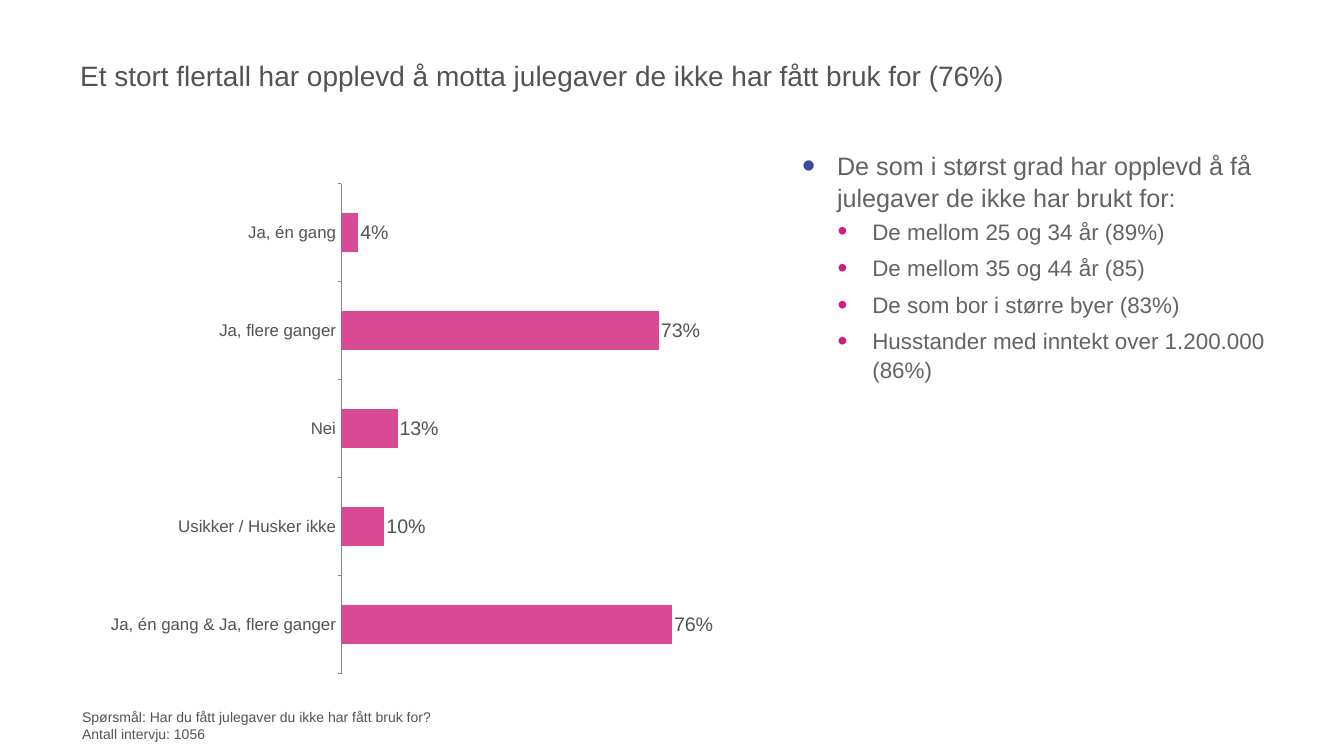
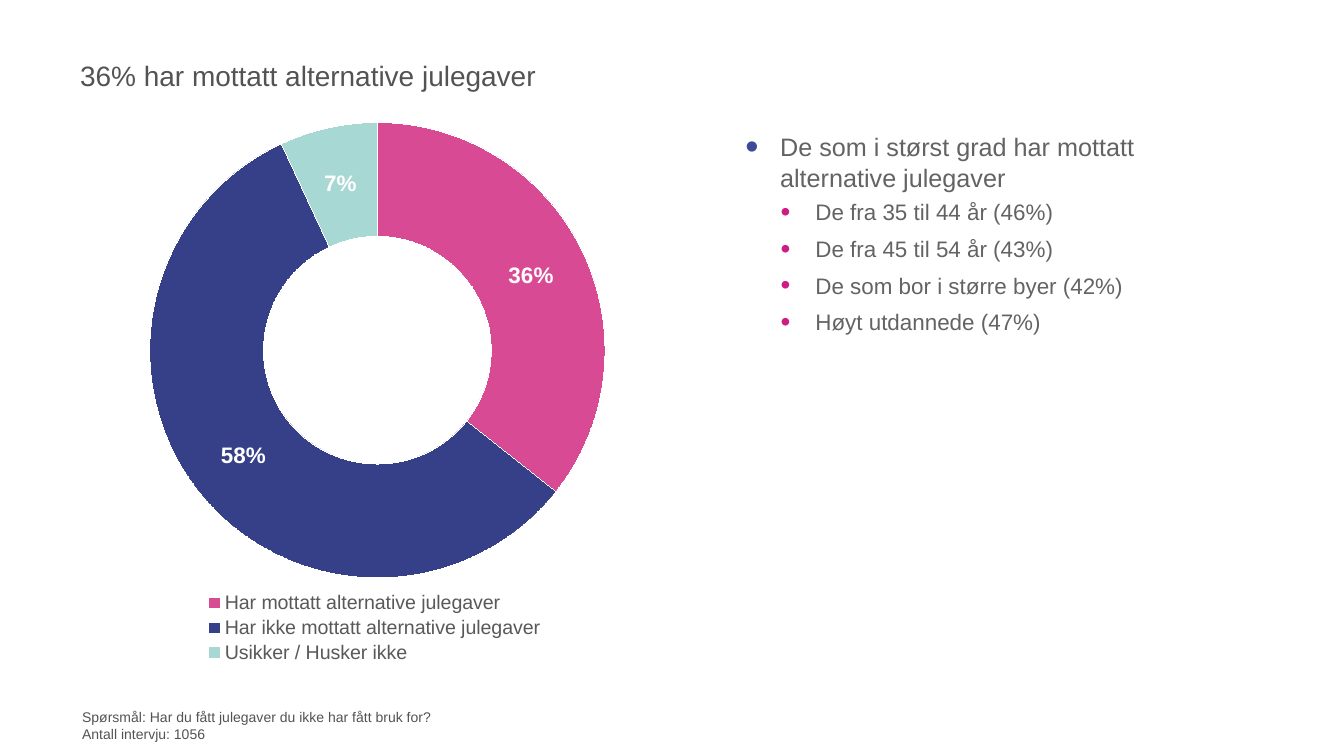
from lxml import etree
from pptx import Presentation
from pptx.chart.data import CategoryChartData
from pptx.dml.color import RGBColor
from pptx.enum.chart import XL_CHART_TYPE, XL_LABEL_POSITION, XL_LEGEND_POSITION, XL_TICK_MARK
from pptx.enum.text import MSO_ANCHOR, PP_ALIGN
from pptx.oxml.ns import qn
from pptx.util import Emu, Pt

PX = 9144  # 100 px to the inch
FONT = "Arial"
DARK, GREY, LEGEND_GREY, AXIS = "535353", "626362", "595959", "868686"
PINK, BLUE, MINT, WHITE = "D94A94", "354088", "A8D8D4", "FFFFFF"
# level: text size, left indent, space after, bullet colour, bullet size %
LEVELS = [(36, 69, 6, "3D4A9A", 150), (32, 139, 12, "CD1D84", 125)]
HANGING = 69


def rgb(value):
    return RGBColor.from_string(value)


def px(*lengths):
    return [Emu(n * PX) for n in lengths]


def child(parent, tag, **attrs):
    return etree.SubElement(parent, qn(tag), attrs)


def set_layout(parent, index, box, inner=False):
    """Place a chart part by fractions of the chart's size."""
    old = parent.find(qn("c:layout"))
    if old is not None:
        parent.remove(old)
    layout = etree.Element(qn("c:layout"))
    parent.insert(index, layout)
    manual = child(layout, "c:manualLayout")
    if inner:
        child(manual, "c:layoutTarget", val="inner")
    for side in "xy":
        child(manual, f"c:{side}Mode", val="edge")
    for side, value in zip("xywh", box):
        child(manual, f"c:{side}", val=str(value))


class Deck:
    def __init__(self):
        self.prs = Presentation()
        self.prs.slide_width, self.prs.slide_height = px(2667, 1500)
        self.s = None

    def slide(self, title):
        self.s = self.prs.slides.add_slide(self.prs.slide_layouts[5])
        sp = self.s.shapes.title
        sp.left, sp.top, sp.width, sp.height = px(153, 47, 2366, 204)
        self.fill_text(sp.text_frame, [title], 40, DARK, MSO_ANCHOR.MIDDLE)

    def style(self, font, size, color, bold=False):
        font.name, font.size, font.bold = FONT, Pt(size), bold
        font.color.rgb = rgb(color)

    def fill_text(self, tf, lines, size, color, anchor):
        tf.word_wrap = True
        tf.vertical_anchor = anchor
        tf.margin_left, tf.margin_top, tf.margin_right, tf.margin_bottom = px(6, 6, 6, 6)
        tf.text = "\n".join(lines)
        for p in tf.paragraphs:
            p.alignment = PP_ALIGN.LEFT
            self.style(p.runs[0].font, size, color)

    def text(self, box, lines, size, color, anchor=MSO_ANCHOR.TOP):
        tf = self.s.shapes.add_textbox(*px(*box)).text_frame
        self.fill_text(tf, lines, size, color, anchor)
        return tf

    def bullets(self, box, heading, items):
        tf = self.text(box, [heading, *items], LEVELS[0][0], GREY)
        for i, p in enumerate(tf.paragraphs):
            p.level = min(i, 1)
            size, indent, after, color, percent = LEVELS[p.level]
            pPr = p._p.get_or_add_pPr()
            pPr.set("marL", str(indent * PX))
            pPr.set("indent", str(-HANGING * PX))
            child(child(pPr, "a:buClr"), "a:srgbClr", val=color)
            child(pPr, "a:buSzPct", val=str(percent * 1000))
            child(pPr, "a:buFont", typeface=FONT)
            child(pPr, "a:buChar", char="•")
            p.line_spacing = 1.05
            p.space_after = Pt(after)
            p.runs[0].font.size = Pt(size)

    def footer(self):
        self.text((157, 1400, 2284, 79),
                  ["Spørsmål: Har du fått julegaver du ikke har fått bruk for?",
                   "Antall intervju: 1056"], 20, DARK, MSO_ANCHOR.MIDDLE)

    def chart(self, kind, box, shares, plot_box, label_size, label_color, bold=False):
        data = CategoryChartData(number_format="0%")
        data.categories = list(shares)
        data.add_series("Series 1", list(shares.values()))
        chart = self.s.shapes.add_chart(kind, *px(*box), data).chart
        chart.has_title = chart.has_legend = False
        self.style(chart.font, 10, "000000")
        set_layout(chart.element.find(".//" + qn("c:plotArea")), 0, plot_box, inner=True)
        plot = chart.plots[0]
        plot.has_data_labels = True
        labels = plot.data_labels
        labels.show_value, labels.show_percentage = True, False
        labels.number_format, labels.number_format_is_linked = "0%", False
        self.style(labels.font, label_size, label_color, bold)
        return chart

    def bar_chart(self, box, shares):
        chart = self.chart(XL_CHART_TYPE.BAR_CLUSTERED, box, shares,
                           (0.37, 0.07, 0.55, 0.9), 28, DARK)
        plot = chart.plots[0]
        plot.gap_width, plot.overlap, plot.vary_by_categories = 150, -20, False
        plot.data_labels.position = XL_LABEL_POSITION.OUTSIDE_END
        fill = plot.series[0].format.fill
        fill.solid()
        fill.fore_color.rgb = rgb(PINK)
        # Axes
        names, values = chart.category_axis, chart.value_axis
        names.reverse_order = True
        names.has_major_gridlines = False
        names.major_tick_mark = XL_TICK_MARK.OUTSIDE
        names.format.line.color.rgb = rgb(AXIS)
        self.style(names.tick_labels.font, 24, DARK)
        values.minimum_scale, values.maximum_scale = 0, 0.9
        values.has_major_gridlines = values.visible = False

    def doughnut(self, box, shares, colors):
        chart = self.chart(XL_CHART_TYPE.DOUGHNUT, box, shares,
                           (0.12, 0.01, 0.77, 0.82), 32, WHITE, bold=True)
        plot = chart.plots[0]
        plot.vary_by_categories = True
        chart.element.find(".//" + qn("c:holeSize")).set("val", "60")
        for i, color in enumerate(colors):
            look = plot.series[0].points[i].format
            look.fill.solid()
            look.fill.fore_color.rgb = rgb(color)
            look.line.color.rgb = rgb(WHITE)
        # Legend
        chart.has_legend = True
        chart.legend.position = XL_LEGEND_POSITION.BOTTOM
        chart.legend.include_in_layout = False
        self.style(chart.legend.font, 28, LEGEND_GREY)
        set_layout(chart.element.find(".//" + qn("c:legend")), 1, (0.21, 0.85, 0.58, 0.14))


def main():
    deck = Deck()

    # Unwanted gifts
    deck.slide("Et stort flertall har opplevd å motta julegaver de ikke har fått bruk for (76%)")
    deck.bar_chart((153, 289, 1415, 1080), {
        "Ja, én gang": 0.04,
        "Ja, flere ganger": 0.73,
        "Nei": 0.13,
        "Usikker / Husker ikke": 0.1,
        "Ja, én gang & Ja, flere ganger": 0.76,
    })
    deck.bullets((1586, 289, 935, 1079),
                 "De som i størst grad har opplevd å få julegaver de ikke har brukt for:",
                 ["De mellom 25 og 34 år (89%)",
                  "De mellom 35 og 44 år (85)",
                  "De som bor i større byer (83%)",
                  "Husstander med inntekt over 1.200.000 (86%)"])
    deck.footer()

    # Alternative gifts
    deck.slide("36% har mottatt alternative julegaver")
    deck.doughnut((153, 232, 1180, 1102), {
        "Har mottatt alternative julegaver": 0.36,
        "Har ikke mottatt alternative julegaver": 0.58,
        "Usikker / Husker ikke": 0.07,
    }, [PINK, BLUE, MINT])
    deck.footer()
    deck.bullets((1473, 251, 968, 1120),
                 "De som i størst grad har mottatt alternative julegaver",
                 ["De fra 35 til 44 år (46%)",
                  "De fra 45 til 54 år (43%)",
                  "De som bor i større byer (42%)",
                  "Høyt utdannede (47%)"])

    deck.prs.save("out.pptx")


if __name__ == "__main__":
    main()
